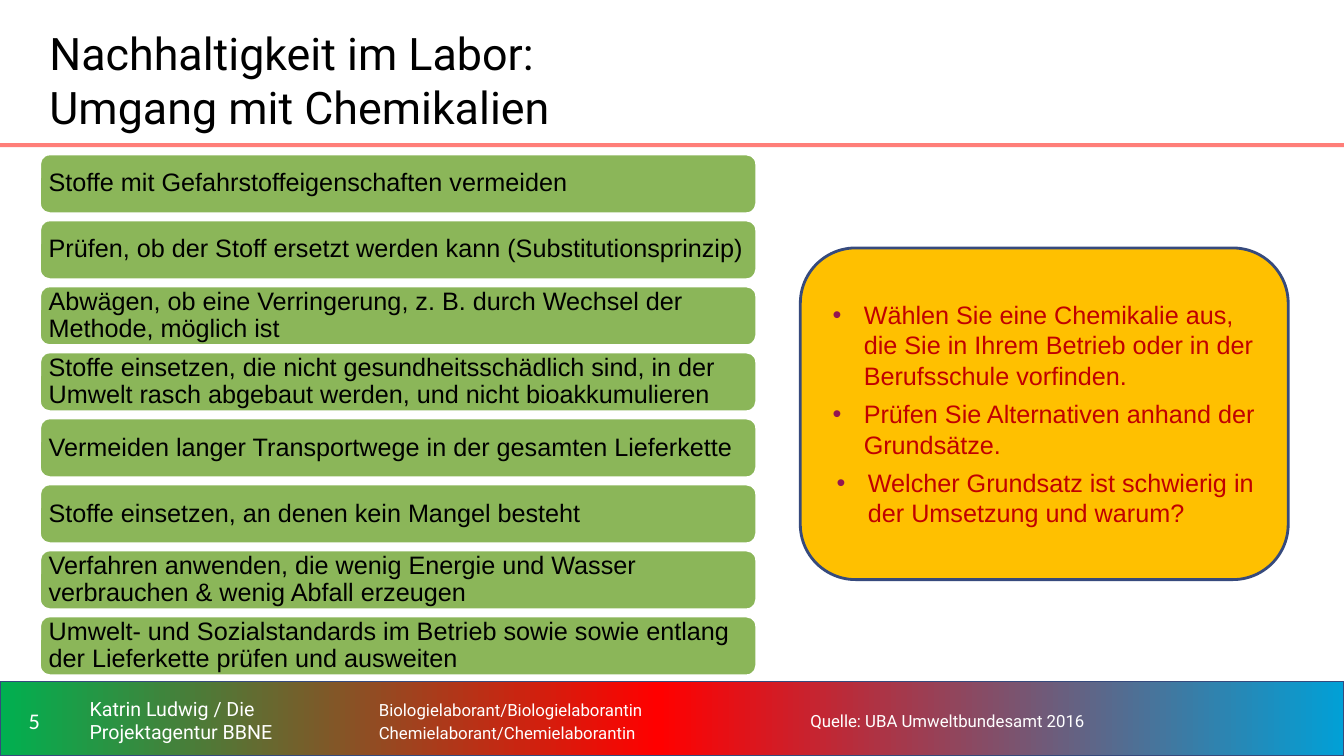
"""Build the slide on sustainable handling of chemicals in the laboratory."""
from copy import deepcopy

from lxml import etree
from pptx import Presentation
from pptx.dml.color import RGBColor
from pptx.enum import shapes as kinds, text as txt
from pptx.oxml import ns
from pptx.util import Pt

BLACK = RGBColor(0, 0, 0)
WHITE = RGBColor(255, 255, 255)
GREEN = RGBColor(0x4E, 0x8F, 0x00)
AMBER = RGBColor(0xFF, 0xC0, 0x00)
RED = RGBColor(0xC0, 0x00, 0x00)
CORAL = RGBColor(0xFF, 0x7E, 0x79)
NAVY = RGBColor(0x36, 0x4A, 0x7D)
BLEND = [(0, RGBColor(0x00, 0xB0, 0x50)), (0.49, RGBColor(0xFF, 0x00, 0x00)),
         (1, RGBColor(0x01, 0xA0, 0xD6))]
RULES = [
    "Stoffe mit Gefahrstoffeigenschaften vermeiden",
    "Prüfen, ob der Stoff ersetzt werden kann (Substitutionsprinzip)",
    "Abwägen, ob eine Verringerung, z. B. durch Wechsel der Methode, möglich ist",
    "Stoffe einsetzen, die nicht gesundheitsschädlich sind, in der Umwelt rasch "
    "abgebaut werden, und nicht bioakkumulieren",
    "Vermeiden langer Transportwege in der gesamten Lieferkette",
    "Stoffe einsetzen, an denen kein Mangel besteht",
    "Verfahren anwenden, die wenig Energie und Wasser verbrauchen & wenig Abfall erzeugen",
    "Umwelt- und Sozialstandards im Betrieb sowie sowie entlang der Lieferkette "
    "prüfen und ausweiten",
]
TASKS = [
    ("Wählen Sie eine Chemikalie aus, die Sie in Ihrem Betrieb oder in der "
     "Berufsschule vorfinden.", 33.8, 0, 0),
    ("Prüfen Sie Alternativen anhand der Grundsätze.", 33.8, 6, 0),
    ("Welcher Grundsatz ist schwierig in der Umsetzung und warum?", 36.7, 6, 3),
]
FOOT = [
    (0, 49, ["5"], 16, "Calibri", 1),
    (56.9, 200, ["Katrin Ludwig / Die Projektagentur BBNE"], 14, "Roboto", 1),
    (263.5, 301.7, ["Biologielaborant/Biologielaborantin",
                    "Chemielaborant/Chemielaborantin"], 12, "Roboto", 1.1),
    (571.7, 363.6, ["Quelle: UBA Umweltbundesamt 2016"], 12, "Roboto", 1.1),
]


def draw(kind, x, y, w, h):
    shape = slide.shapes.add_shape(kind, Pt(x), Pt(y), Pt(w), Pt(h))
    shape.shadow.inherit = False
    shape.fill.solid()
    return shape


def write(shape, lines, size, face, color, inset=(7.2, 3.6), gap=1):
    frame = shape.text_frame
    frame.word_wrap = True
    frame.auto_size = txt.MSO_AUTO_SIZE.NONE
    frame.vertical_anchor = txt.MSO_ANCHOR.MIDDLE
    frame.margin_left = frame.margin_right = Pt(inset[0])
    frame.margin_top = frame.margin_bottom = Pt(inset[1])
    for i, line in enumerate(lines):
        para = frame.add_paragraph() if i else frame.paragraphs[0]
        para.alignment = txt.PP_ALIGN.LEFT
        para.line_spacing = gap
        for j, part in enumerate(line.split("\n")):
            if j:
                para.add_line_break()
            run = para.add_run()
            run.text = part
            run.font.size = Pt(size)
            run.font.name = face
            run.font.color.rgb = color
    return frame.paragraphs


deck = Presentation()
deck.slide_width, deck.slide_height = Pt(960), Pt(540)
slide = deck.slides.add_slide(deck.slide_layouts[5])
RECT, ROUND = kinds.MSO_SHAPE.RECTANGLE, kinds.MSO_SHAPE.ROUNDED_RECTANGLE

title = slide.shapes.title
title.left, title.top, title.width, title.height = Pt(28.1), Pt(14.4), Pt(708.5), Pt(85)
write(title, ["Nachhaltigkeit im Labor:\nUmgang mit Chemikalien"], 32, "Roboto", BLACK)

strip = draw(RECT, 0, 102.2, 960, 2.9)
strip.fill.fore_color.rgb = CORAL
strip.line.fill.background()

bar = draw(RECT, 0, 486.7, 960, 53.3)
bar.line.color.rgb = NAVY
bar.line.width = Pt(1)
bar.fill.gradient()
bar.fill.gradient_angle = 0
stops = bar._element.spPr.find(".//" + ns.qn("a:gsLst"))
stops.insert(1, deepcopy(stops[0]))
for stop, (place, color) in zip(bar.fill.gradient_stops, BLEND):
    stop.position = place
    stop.color.rgb = color

for x, w, lines, size, face, gap in FOOT:
    box = slide.shapes.add_textbox(Pt(x), Pt(492.5), Pt(w), Pt(44))
    paras = write(box, lines, size, face, WHITE, gap=gap)
    if x == 0:
        paras[0].alignment = txt.PP_ALIGN.CENTER

for i, rule in enumerate(RULES):
    card = draw(ROUND, 28.3, 110 + 47.15 * i, 512.2, 42.6)
    card.fill.fore_color.rgb = GREEN
    tint = card._element.spPr.find(".//" + ns.qn("a:srgbClr"))
    etree.SubElement(tint, ns.qn("a:alpha"), val="65000")
    card.line.color.rgb = WHITE
    card.line.width = Pt(2)
    write(card, [rule], 18, "Arial", BLACK, (4.4, 4.4), 0.9)

panel = draw(ROUND, 571.7, 177.1, 348.5, 236.9)
panel.fill.fore_color.rgb = AMBER
panel.line.color.rgb = NAVY
panel.line.width = Pt(2)
paras = write(panel, [task[0] for task in TASKS], 18, "Arial", RED, (0, 0))
for para, (_, left, before, after) in zip(paras, TASKS):
    props = para._p.get_or_add_pPr()
    props.set("marL", str(Pt(left)))
    props.set("indent", str(Pt(-22.3)))
    tone = etree.SubElement(props, ns.qn("a:buClr"))
    etree.SubElement(tone, ns.qn("a:srgbClr"), val="941651")
    etree.SubElement(props, ns.qn("a:buFont"), typeface="Arial")
    etree.SubElement(props, ns.qn("a:buChar"), char="•")
    para.space_before = Pt(before)
    para.space_after = Pt(after)

deck.save("out.pptx")
